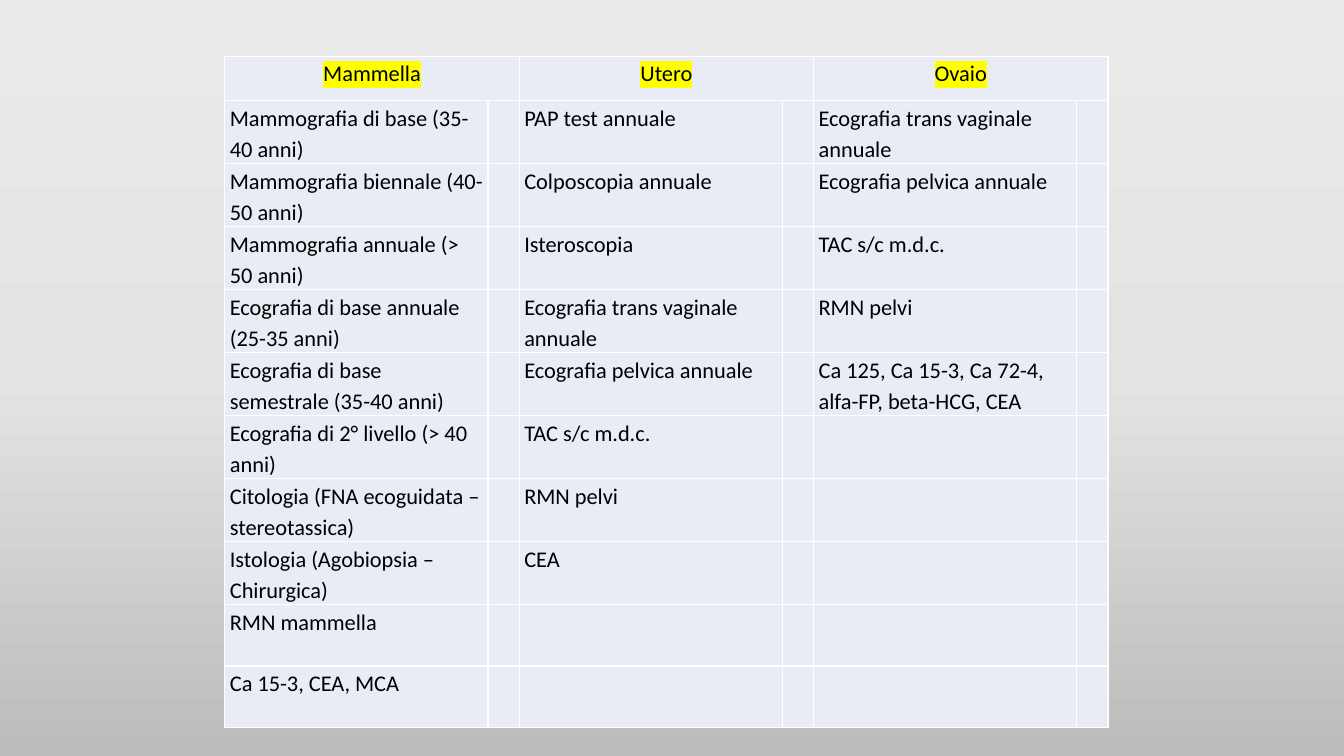
from lxml import etree
from pptx import Presentation
from pptx.dml.color import RGBColor
from pptx.enum.text import PP_ALIGN
from pptx.oxml.ns import qn
from pptx.util import Inches, Pt

CENTER = PP_ALIGN.CENTER
LEFT = PP_ALIGN.LEFT

BLACK = RGBColor(0x00, 0x00, 0x00)
WHITE = RGBColor(0xFF, 0xFF, 0xFF)
YELLOW = RGBColor(0xFF, 0xFF, 0x00)
CELL_BLUE = RGBColor(0xE9, 0xEB, 0xF5)
GREY_STOPS = [
    (0, RGBColor(0xEB, 0xEA, 0xEA)),
    (50, RGBColor(0xE4, 0xE3, 0xE3)),
    (100, RGBColor(0xBD, 0xBC, 0xBC)),
]

# Examinations for each organ
SCREENING = {
    "Mammella": [
        "Mammografia di base (35-40 anni)",
        "Mammografia biennale (40-50 anni)",
        "Mammografia annuale (> 50 anni)",
        "Ecografia di base annuale (25-35 anni)",
        "Ecografia di base semestrale (35-40 anni)",
        "Ecografia di 2° livello (> 40 anni)",
        "Citologia (FNA ecoguidata – stereotassica)",
        "Istologia (Agobiopsia – Chirurgica)",
        "RMN mammella",
        "Ca 15-3, CEA, MCA",
    ],
    "Utero": [
        "PAP test annuale",
        "Colposcopia annuale",
        "Isteroscopia",
        "Ecografia trans vaginale annuale",
        "Ecografia pelvica annuale",
        "TAC s/c m.d.c.",
        "RMN pelvi",
        "CEA",
    ],
    "Ovaio": [
        "Ecografia trans vaginale annuale",
        "Ecografia pelvica annuale",
        "TAC s/c m.d.c.",
        "RMN pelvi",
        "Ca 125, Ca 15-3, Ca 72-4, alfa-FP, beta-HCG, CEA",
    ],
}
EXAM_WIDTH, CHECK_WIDTH = 2.61, 0.31
HEADER_HEIGHT, EXAM_HEIGHT = 0.44, 0.61


def add_color(parent, color):
    etree.SubElement(parent, qn("a:srgbClr"), val=str(color))


class ScreeningSlide:
    font = "Calibri"
    size = Pt(16)

    def __init__(self, presentation):
        self.slide = presentation.slides.add_slide(presentation.slide_layouts[6])

    def background(self, stops):
        fill = self.slide.background.fill
        fill.gradient()
        fill.gradient_angle = 270
        stop_list = next(self.slide.element.iter(qn("a:gsLst")))
        for old_stop in list(stop_list):
            stop_list.remove(old_stop)
        for percent, color in stops:
            stop = etree.SubElement(stop_list, qn("a:gs"), pos=str(percent * 1000))
            add_color(stop, color)

    def table(self, left, top, widths, heights):
        frame = self.slide.shapes.add_table(
            len(heights), len(widths), Inches(left), Inches(top),
            Inches(sum(widths)), Inches(sum(heights)))
        table = frame.table
        for column, width in zip(table.columns, widths):
            column.width = Inches(width)
        for row, height in zip(table.rows, heights):
            row.height = Inches(height)
        for cell in table.iter_cells():
            cell.fill.solid()
            cell.fill.fore_color.rgb = CELL_BLUE
            self.borders(cell)
        return table

    def borders(self, cell):
        properties = cell._tc.get_or_add_tcPr()
        for index, side in enumerate(("a:lnL", "a:lnR", "a:lnT", "a:lnB")):
            line = etree.Element(qn(side), w=str(Pt(1)))
            add_color(etree.SubElement(line, qn("a:solidFill")), WHITE)
            properties.insert(index, line)

    def cell_text(self, cell, text, align=LEFT, highlight=None):
        cell.margin_left = cell.margin_right = Inches(0.05)
        cell.margin_top = cell.margin_bottom = 0
        cell.text_frame.text = text
        paragraph = cell.text_frame.paragraphs[0]
        paragraph.alignment = align
        paragraph.line_spacing = 1.15
        paragraph.space_after = Pt(10)
        font = paragraph.runs[0].font
        font.name, font.size, font.bold = self.font, self.size, False
        font.color.rgb = BLACK
        if highlight is not None:
            mark = etree.Element(qn("a:highlight"))
            add_color(mark, highlight)
            run_properties = paragraph.runs[0]._r.get_or_add_rPr()
            run_properties.find(qn("a:solidFill")).addnext(mark)


def main():
    presentation = Presentation()
    presentation.slide_width = Inches(13.33)
    presentation.slide_height = Inches(7.5)
    screening = ScreeningSlide(presentation)
    screening.background(GREY_STOPS)

    # Each organ has an examination column and a narrow check column
    exam_rows = max(len(exams) for exams in SCREENING.values())
    widths = [EXAM_WIDTH, CHECK_WIDTH] * len(SCREENING)
    heights = [HEADER_HEIGHT] + [EXAM_HEIGHT] * exam_rows
    plan = screening.table(2.23, 0.56, widths, heights)

    for position, (organ, exams) in enumerate(SCREENING.items()):
        column = 2 * position
        header = plan.cell(0, column)
        header.merge(plan.cell(0, column + 1))
        screening.cell_text(header, organ, CENTER, YELLOW)
        for row, exam in enumerate(exams, start=1):
            screening.cell_text(plan.cell(row, column), exam)

    presentation.save("out.pptx")


if __name__ == "__main__":
    main()
